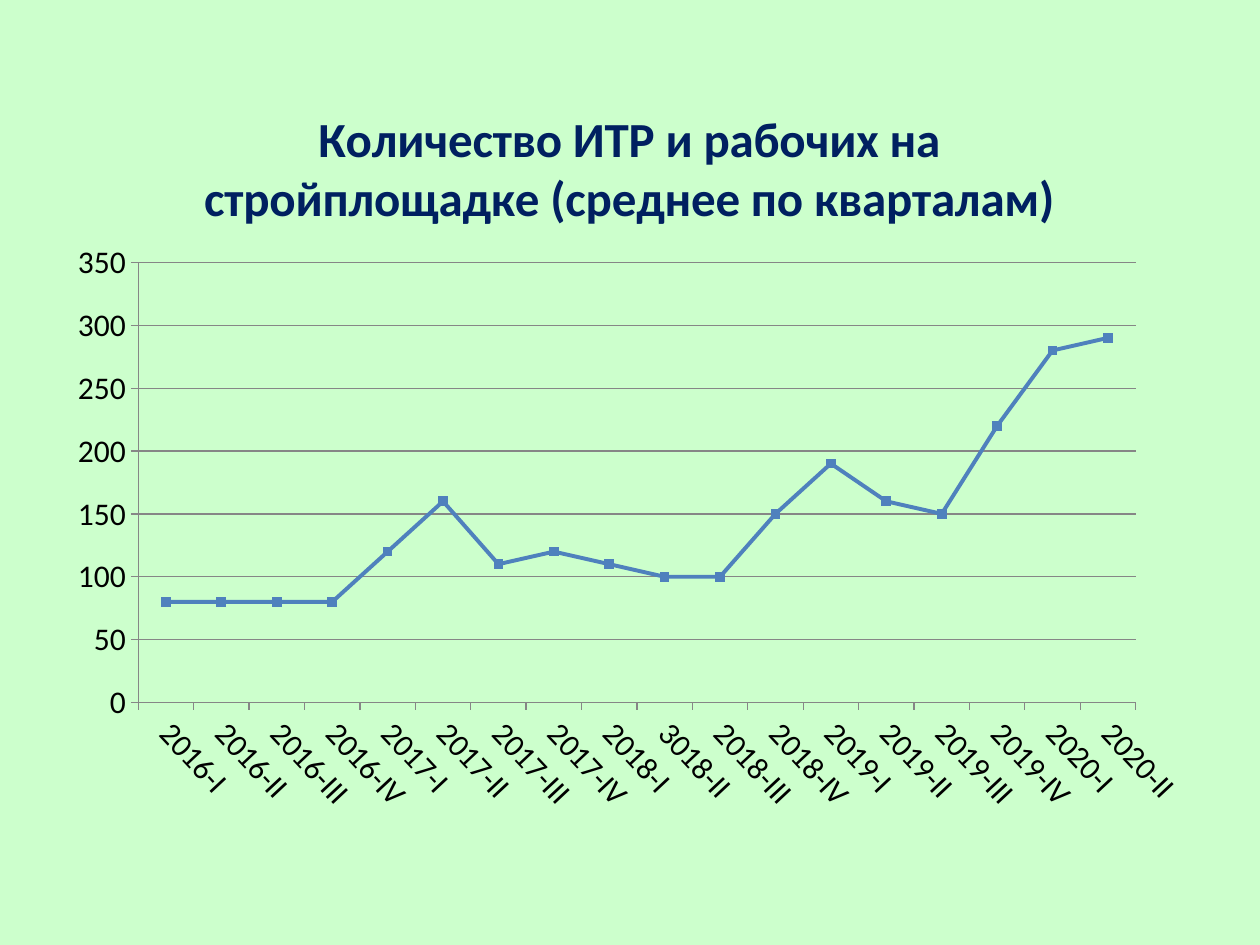
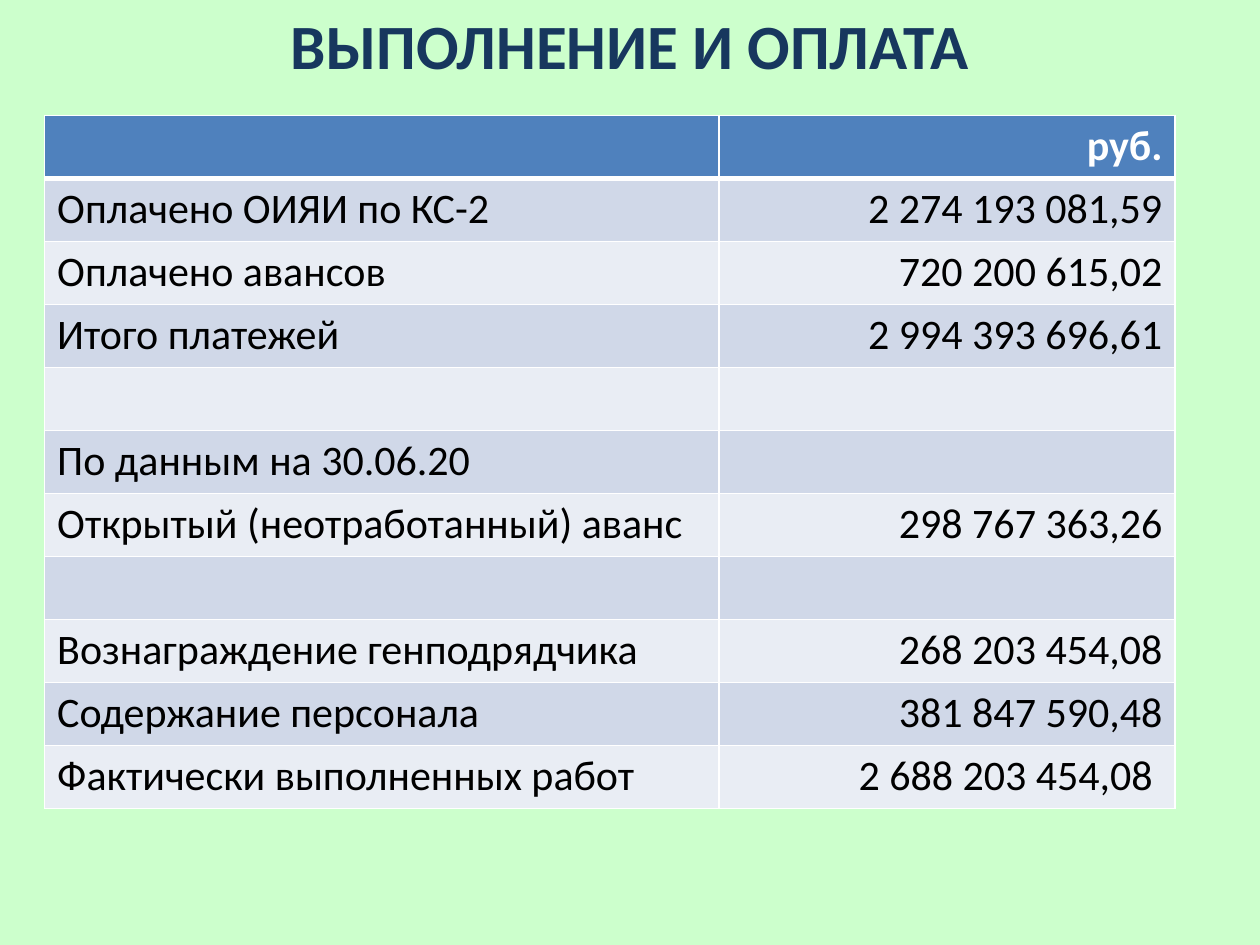
from lxml import etree
from pptx import Presentation
from pptx.chart.data import CategoryChartData
from pptx.dml.color import RGBColor
from pptx.enum.chart import XL_CHART_TYPE, XL_MARKER_STYLE, XL_TICK_MARK
from pptx.enum.text import MSO_ANCHOR, PP_ALIGN
from pptx.oxml import parse_xml
from pptx.oxml.ns import nsdecls, qn
from pptx.util import Pt

LINE = XL_CHART_TYPE.LINE_MARKERS
SQUARE = XL_MARKER_STYLE.SQUARE
OUT = XL_TICK_MARK.OUTSIDE
LEFT, MID, RIGHT = PP_ALIGN.LEFT, PP_ALIGN.CENTER, PP_ALIGN.RIGHT
CENTRE = MSO_ANCHOR.MIDDLE

FONT = "Calibri"
MINT = RGBColor(0xCC, 0xFF, 0xCC)
NAVY = RGBColor(0x00, 0x20, 0x60)
DEEP = RGBColor(0x17, 0x37, 0x5E)
BLUE = RGBColor(0x4F, 0x81, 0xBD)
DARK = RGBColor(0xD0, 0xD8, 0xE8)
PALE = RGBColor(0xE9, 0xED, 0xF4)
GREY = RGBColor(0x86, 0x86, 0x86)
BLACK = RGBColor(0, 0, 0)
WHITE = RGBColor(0xFF, 0xFF, 0xFF)

# Staff on site, to the nearest ten
STAFF = {
    "2016-I": 80, "2016-II": 80, "2016-III": 80, "2016-IV": 80,
    "2017-I": 120, "2017-II": 160, "2017-III": 110, "2017-IV": 120,
    "2018-I": 110, "3018-II": 100, "2018-III": 100, "2018-IV": 150,
    "2019-I": 190, "2019-II": 160, "2019-III": 150, "2019-IV": 220,
    "2020-I": 280, "2020-II": 290,
}
SUMS = [
    ("", "руб."),
    ("Оплачено ОИЯИ по КС-2", "2 274 193 081,59"),
    ("Оплачено авансов", "720 200 615,02"),
    ("Итого платежей", "2 994 393 696,61"),
    ("", ""),
    ("По данным на 30.06.20", ""),
    ("Открытый (неотработанный) аванс", "298 767 363,26"),
    ("", ""),
    ("Вознаграждение генподрядчика", "268 203 454,08"),
    ("Содержание персонала", "381 847 590,48"),
    ("Фактически выполненных работ", "2 688 203 454,08 "),
]


def style(font, size, color, bold=False):
    font.name, font.size, font.bold = FONT, Pt(size), bold
    font.color.rgb = color


def write(frame, text, size=24, color=BLACK, bold=False, align=LEFT):
    para = frame.paragraphs[0]
    para.alignment = align
    run = para.add_run()
    run.text = text
    style(run.font, size, color, bold)


def edge(cell, side, width):
    props = cell._tc.get_or_add_tcPr()
    line = etree.SubElement(props, qn("a:ln" + side), w=str(Pt(width)))
    fill = etree.SubElement(line, qn("a:solidFill"))
    etree.SubElement(fill, qn("a:srgbClr"), val=str(WHITE))


class Deck:
    def __init__(self):
        self.prs = Presentation()
        self.prs.slide_width, self.prs.slide_height = Pt(720), Pt(540)
        back = self.prs.slide_master.background.fill
        back.solid()
        back.fore_color.rgb = MINT
        self.slide = None

    def page(self, title=None):
        layout = self.prs.slide_layouts[5 if title else 6]
        self.slide = self.prs.slides.add_slide(layout)
        if title:
            head = self.slide.shapes.title
            head.left, head.top = Pt(0), Pt(0)
            head.width, head.height = Pt(720), Pt(51)
            head.text_frame.vertical_anchor = CENTRE
            write(head.text_frame, title, size=36, color=DEEP, bold=True, align=MID)

    def chart(self, title, points, box, plot):
        data = CategoryChartData()
        data.categories = list(points)
        data.add_series("Series 1", list(points.values()))
        chart = self.slide.shapes.add_chart(LINE, *map(Pt, box), data).chart
        style(chart.font, 18, BLACK)
        chart.has_legend = False
        write(chart.chart_title.text_frame, title, size=28, color=NAVY, bold=True, align=MID)

        # Axes and grid
        for axis in (chart.category_axis, chart.value_axis):
            axis.major_tick_mark = OUT
            style(axis.tick_labels.font, 18, BLACK)
            self.stroke(axis.format.line, GREY, 0.75)
        self.stroke(chart.value_axis.major_gridlines.format.line, GREY, 0.75)
        chart.value_axis.minimum_scale = 0
        chart.value_axis.maximum_scale = 350
        chart.value_axis.major_unit = 50
        body = chart.category_axis._element.find(".//" + qn("a:bodyPr"))
        body.set("rot", str(47 * 60000))

        # Line and markers
        chart.plots[0].vary_by_categories = False
        line = chart.plots[0].series[0]
        line.smooth = False
        self.stroke(line.format.line, BLUE, 2.25)
        line.marker.style, line.marker.size = SQUARE, 5
        line.marker.format.fill.solid()
        line.marker.format.fill.fore_color.rgb = BLUE
        self.stroke(line.marker.format.line, BLUE, 0.75)

        # Place of the plot as shares of the chart
        area = chart._chartSpace.find(".//" + qn("c:plotArea"))
        for old in area.findall(qn("c:layout")):
            area.remove(old)
        parts = "".join(f'<c:{key} val="{val / full}"/>'
                        for key, val, full in zip("xywh", plot, box[2:] * 2))
        area.insert(0, parse_xml(
            f'<c:layout {nsdecls("c")}><c:manualLayout><c:layoutTarget val="inner"/>'
            f'<c:xMode val="edge"/><c:yMode val="edge"/>{parts}'
            '</c:manualLayout></c:layout>'))

    def stroke(self, line, color, width):
        line.color.rgb = color
        line.width = Pt(width)

    def table(self, rows, left, top, widths, high):
        size = Pt(sum(widths)), Pt(high * len(rows))
        shape = self.slide.shapes.add_table(len(rows), len(widths), Pt(left), Pt(top), *size)
        grid = shape.table
        for col, width in zip(grid.columns, widths):
            col.width = Pt(width)
        for i, row in enumerate(rows):
            grid.rows[i].height = Pt(high)
            for j, text in enumerate(row):
                cell = grid.cell(i, j)
                cell.margin_top = cell.margin_bottom = Pt(3)
                for side in "LRTB":
                    thick = (i == 0 and side == "B") or (i == 1 and side == "T")
                    edge(cell, side, 3 if thick else 1)
                cell.fill.solid()
                cell.fill.fore_color.rgb = BLUE if i == 0 else (PALE, DARK)[i % 2]
                if text:
                    write(cell.text_frame, text, color=BLACK if i else WHITE,
                          bold=i == 0, align=RIGHT if j else LEFT)


def main():
    deck = Deck()

    # Staff by quarter
    deck.page()
    deck.chart("Количество ИТР и рабочих на стройплощадке (среднее по кварталам)",
               STAFF, box=(31, 43, 657, 431), plot=(48, 107, 570, 251.5))

    # Work done and paid
    deck.page("ВЫПОЛНЕНИЕ И ОПЛАТА")
    deck.table(SUMS, left=25.5, top=66, widths=(385.5, 260.5), high=36)

    deck.prs.save("out.pptx")


if __name__ == "__main__":
    main()
